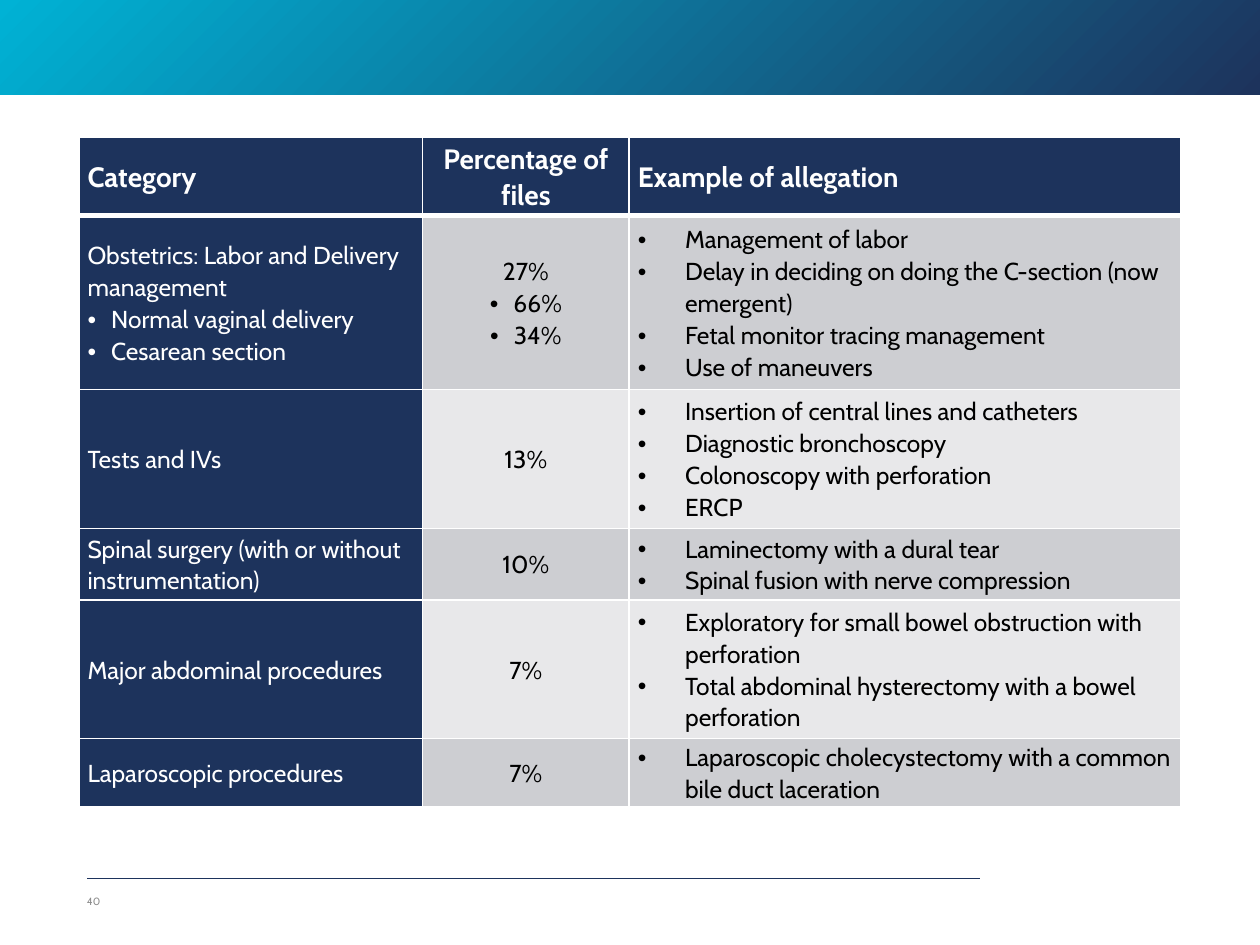
from dataclasses import dataclass

from lxml import etree
from pptx import Presentation
from pptx.dml.color import RGBColor
from pptx.enum.shapes import MSO_CONNECTOR, MSO_SHAPE
from pptx.enum.text import MSO_ANCHOR, PP_ALIGN
from pptx.oxml.ns import qn
from pptx.util import Pt

LEFT, CENTER = PP_ALIGN.LEFT, PP_ALIGN.CENTER
MIDDLE = MSO_ANCHOR.MIDDLE
RECTANGLE = MSO_SHAPE.RECTANGLE
STRAIGHT = MSO_CONNECTOR.STRAIGHT

FONT = "Cabin"
COLORS = {
    "navy": "1D335C",
    "cyan": "00B2D5",
    "white": "FFFFFF",
    "black": "000000",
    "dark_band": "CDCED2",
    "light_band": "E8E8EA",
    "page_number": "8C8C8C",
}
COLUMN_WIDTHS = (196.5, 118, 315.5)
COLUMN_ALIGNMENTS = (LEFT, CENTER, LEFT)
HEADINGS = ("Category", "Percentage of files", "Example of allegation")
HEADER_HEIGHT = 44.6
SMALL_INDENT, LARGE_INDENT = 13.5, 27


@dataclass
class ClaimRow:
    height: float
    category: str
    percentage: str
    allegations: tuple[str, ...]
    subcategories: tuple[str, ...] = ()
    subpercentages: tuple[str, ...] = ()


@dataclass
class Line:
    text: str
    indent: float = 0  # a hanging indent brings a bullet with it


CLAIM_ROWS = (
    ClaimRow(99.4, "Obstetrics: Labor and Delivery management", "27%",
             ("Management of labor",
              "Delay in deciding on doing the C-section (now emergent)",
              "Fetal monitor tracing management",
              "Use of maneuvers"),
             ("Normal vaginal delivery", "Cesarean section"),
             ("66%", "34%")),
    ClaimRow(79.2, "Tests and IVs", "13%",
             ("Insertion of central lines and catheters",
              "Diagnostic bronchoscopy",
              "Colonoscopy with perforation",
              "ERCP")),
    ClaimRow(41, "Spinal surgery (with or without instrumentation)", "10%",
             ("Laminectomy with a dural tear",
              "Spinal fusion with nerve compression")),
    ClaimRow(79.2, "Major abdominal procedures", "7%",
             ("Exploratory for small bowel obstruction with perforation",
              "Total abdominal hysterectomy with a bowel perforation")),
    ClaimRow(39, "Laparoscopic procedures", "7%",
             ("Laparoscopic cholecystectomy with a common bile duct laceration",)),
)


def rgb(name: str) -> RGBColor:
    return RGBColor.from_string(COLORS[name])


def format_font(paragraph, size: float, color: str, bold: bool = False) -> None:
    for run in paragraph.runs:
        run.font.name = FONT
        run.font.size = Pt(size)
        run.font.bold = bold
        run.font.color.rgb = rgb(color)


def add_bullet(paragraph, indent: float) -> None:
    properties = paragraph._p.get_or_add_pPr()
    properties.set("marL", str(Pt(indent)))
    properties.set("indent", str(-Pt(indent)))
    etree.SubElement(properties, qn("a:buFont"), typeface="Arial")
    etree.SubElement(properties, qn("a:buChar"), char="•")


def set_borders(cell, top: float, bottom: float) -> None:
    properties = cell._tc.get_or_add_tcPr()
    for side, width in (("L", 1), ("R", 1), ("T", top), ("B", bottom)):
        border = etree.SubElement(properties, qn(f"a:ln{side}"), w=str(Pt(width)))
        fill = etree.SubElement(border, qn("a:solidFill"))
        etree.SubElement(fill, qn("a:srgbClr"), val=COLORS["white"])


def fill_cell(cell, lines: list[Line], fill: str, color: str, alignment,
              size: float = 14, bold: bool = False,
              top: float = 1, bottom: float = 1) -> None:
    set_borders(cell, top, bottom)
    cell.fill.solid()
    cell.fill.fore_color.rgb = rgb(fill)
    cell.vertical_anchor = MIDDLE
    cell.margin_left = cell.margin_right = Pt(5)
    cell.margin_top = cell.margin_bottom = Pt(0)
    cell.text_frame.text = "\n".join(line.text for line in lines)
    for paragraph, line in zip(cell.text_frame.paragraphs, lines):
        if line.indent:
            add_bullet(paragraph, line.indent)
        paragraph.alignment = alignment
        paragraph.line_spacing = 1.07
        format_font(paragraph, size, color, bold)


def add_banner(slide, width: int) -> None:
    banner = slide.shapes.add_shape(RECTANGLE, 0, 0, width, Pt(54))
    banner.shadow.inherit = False
    banner.line.fill.background()
    banner.fill.gradient()
    for stop, color in zip(banner.fill.gradient_stops, ("navy", "cyan")):
        stop.color.rgb = rgb(color)
    # Radiate from the bottom right corner
    gradient = banner._element.spPr.find(qn("a:gradFill"))
    gradient.remove(gradient.find(qn("a:lin")))
    circle = etree.SubElement(gradient, qn("a:path"), path="circle")
    etree.SubElement(circle, qn("a:fillToRect"), l="100000", t="100000")


def add_claims_table(slide) -> None:
    heights = [HEADER_HEIGHT] + [row.height for row in CLAIM_ROWS]
    table = slide.shapes.add_table(
        len(heights), len(COLUMN_WIDTHS), Pt(45), Pt(78.7),
        Pt(sum(COLUMN_WIDTHS)), Pt(sum(heights))).table
    table.horz_banding = False
    for column, width in zip(table.columns, COLUMN_WIDTHS):
        column.width = Pt(width)
    for table_row, height in zip(table.rows, heights):
        table_row.height = Pt(height)

    for index, heading in enumerate(HEADINGS):
        fill_cell(table.cell(0, index), [Line(heading)], "navy", "white",
                  COLUMN_ALIGNMENTS[index], size=16, bold=True, bottom=3)

    for number, row in enumerate(CLAIM_ROWS, start=1):
        band = "dark_band" if number % 2 else "light_band"
        contents = (
            [Line(row.category)] + [Line(text, SMALL_INDENT) for text in row.subcategories],
            [Line(row.percentage)] + [Line(text, SMALL_INDENT) for text in row.subpercentages],
            [Line(text, LARGE_INDENT) for text in row.allegations],
        )
        for index, lines in enumerate(contents):
            fill, color = (band, "black") if index else ("navy", "white")
            fill_cell(table.cell(number, index), lines, fill, color,
                      COLUMN_ALIGNMENTS[index], top=3 if number == 1 else 1)


def add_footer(slide) -> None:
    rule = slide.shapes.add_connector(STRAIGHT, Pt(560), Pt(501.8), Pt(49.7), Pt(501.8))
    rule.line.color.rgb = rgb("navy")
    rule.line.width = Pt(0.4)
    etree.SubElement(rule._element.spPr, qn("a:effectLst"))

    text_frame = slide.shapes.add_textbox(Pt(49.7), Pt(500.4), Pt(27.4), Pt(28.8)).text_frame
    text_frame.word_wrap = True
    text_frame.vertical_anchor = MIDDLE
    text_frame.margin_left = text_frame.margin_right = Pt(0)
    text_frame.margin_top = text_frame.margin_bottom = Pt(0)
    text_frame.text = "40"
    format_font(text_frame.paragraphs[0], 6, "page_number")


def main() -> None:
    presentation = Presentation()
    presentation.slide_width = Pt(720)
    presentation.slide_height = Pt(540)
    slide = presentation.slides.add_slide(presentation.slide_layouts[6])
    add_banner(slide, presentation.slide_width)
    add_claims_table(slide)
    add_footer(slide)
    presentation.save("out.pptx")


if __name__ == "__main__":
    main()
